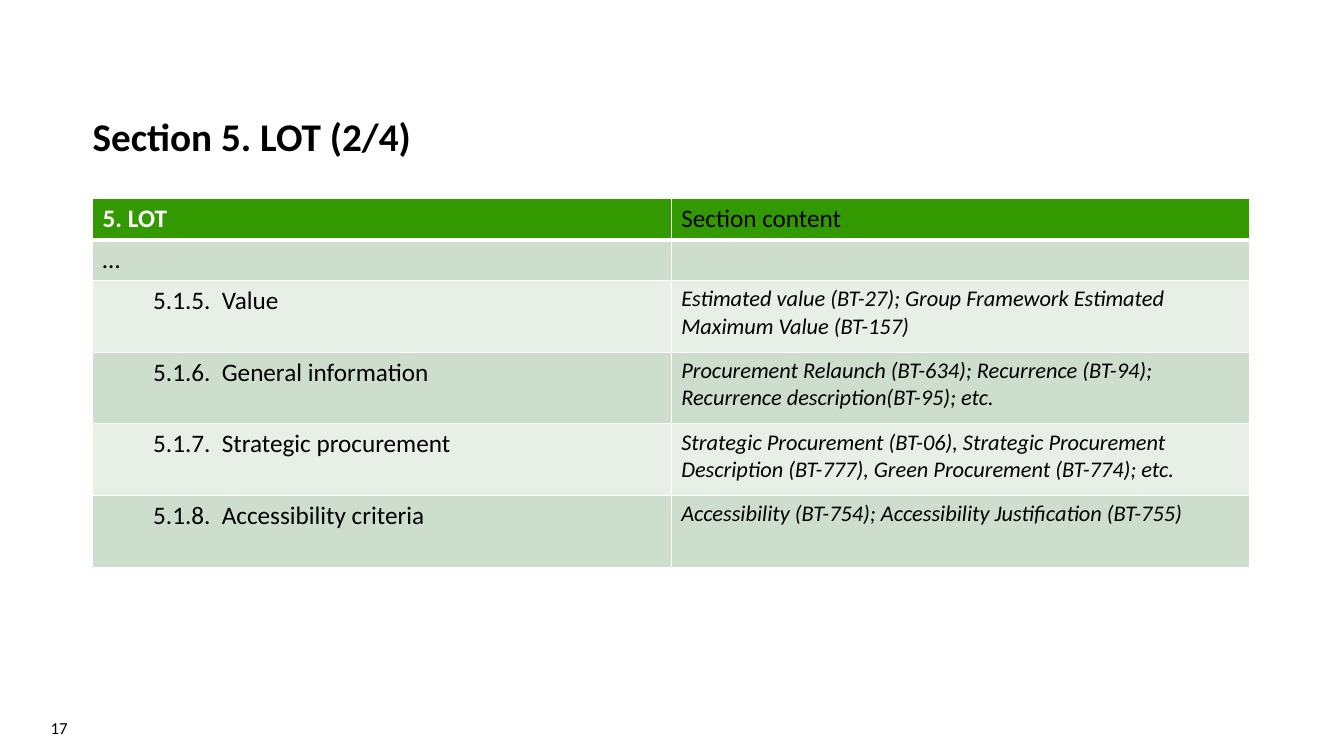
from dataclasses import dataclass

from lxml.etree import SubElement
from pptx import Presentation
from pptx.dml.color import RGBColor
from pptx.enum.text import MSO_ANCHOR, MSO_AUTO_SIZE, PP_ALIGN
from pptx.oxml.ns import qn
from pptx.util import Pt


@dataclass(frozen=True)
class Theme:
    font: str = "Calibri"
    black: str = "000000"
    white: str = "FFFFFF"
    header: str = "339900"
    bands: tuple = ("CEDECC", "E8EFE7")
    title: int = 28
    label: int = 18
    detail: int = 16
    number: int = 12


T = Theme()
HEADER = ("5. LOT", "Section content")
SECTIONS = [
    ("…", ""),
    ("5.1.5.  Value",
     "Estimated value (BT-27); Group Framework Estimated Maximum Value (BT-157)"),
    ("5.1.6.  General information",
     "Procurement Relaunch (BT-634); Recurrence (BT-94); "
     "Recurrence description(BT-95); etc."),
    ("5.1.7.  Strategic procurement",
     "Strategic Procurement (BT-06), Strategic Procurement Description (BT-777), "
     "Green Procurement (BT-774); etc."),
    ("5.1.8.  Accessibility criteria",
     "Accessibility (BT-754); Accessibility Justification (BT-755)"),
]


def add_run(p, text, size, color=T.black, bold=False, italic=False):
    r = p.add_run()
    r.text = text
    f = r.font
    f.name, f.size, f.bold, f.italic = T.font, Pt(size), bold, italic
    f.color.rgb = RGBColor.from_string(color)


def set_borders(cell, bottom):
    tcPr = cell._tc.get_or_add_tcPr()
    for side, width in (("L", 1), ("R", 1), ("T", 1), ("B", bottom)):
        ln = SubElement(tcPr, qn(f"a:ln{side}"), w=str(Pt(width)))
        fill = SubElement(ln, qn("a:solidFill"))
        SubElement(fill, qn("a:srgbClr"), val=T.white)


def fill_cell(cell, text, fill, bottom=1, indent=0, **style):
    set_borders(cell, bottom)
    cell.fill.solid()
    cell.fill.fore_color.rgb = RGBColor.from_string(fill)
    p = cell.text_frame.paragraphs[0]
    if indent:
        p.level = 1
        pPr = p._p.get_or_add_pPr()
        pPr.set("marL", str(Pt(indent)))
        pPr.set("indent", "0")
    if text:
        add_run(p, text, **style)
    else:
        p.font.size = Pt(T.label)


def add_title(s, text, x, y, w, h):
    sp = s.shapes.title
    sp.left, sp.top, sp.width, sp.height = Pt(x), Pt(y), Pt(w), Pt(h)
    tf = sp.text_frame
    tf.auto_size = MSO_AUTO_SIZE.NONE
    tf.vertical_anchor = MSO_ANCHOR.BOTTOM
    tf.margin_left = tf.margin_right = tf.margin_bottom = 0
    tf.margin_top = Pt(3.6)
    p = tf.paragraphs[0]
    p.alignment = PP_ALIGN.LEFT
    p.line_spacing = 0.9
    add_run(p, text, T.title, bold=True)


def add_section_table(s, x, y, w, short_row, tall_row):
    heights = [short_row] * 2 + [tall_row] * (len(SECTIONS) - 1)
    tbl = s.shapes.add_table(len(heights), 2, Pt(x), Pt(y), Pt(w),
                             Pt(sum(heights))).table
    for col in tbl.columns:
        col.width = Pt(w / 2)
    for row, height in zip(tbl.rows, heights):
        row.height = Pt(height)

    # Header row
    fill_cell(tbl.cell(0, 0), HEADER[0], T.header, bottom=3,
              size=T.label, color=T.white, bold=True)
    fill_cell(tbl.cell(0, 1), HEADER[1], T.header, bottom=3, size=T.label)

    # Banded section rows, subsections indented
    for i, (label, detail) in enumerate(SECTIONS):
        band = T.bands[i % 2]
        fill_cell(tbl.cell(i + 1, 0), label, band, indent=36 if i else 0,
                  size=T.label)
        fill_cell(tbl.cell(i + 1, 1), detail, band, size=T.detail, italic=True)


def add_page_number(s, number, x, y, w, h):
    tf = s.shapes.add_textbox(Pt(x), Pt(y), Pt(w), Pt(h)).text_frame
    tf.word_wrap = True
    tf.vertical_anchor = MSO_ANCHOR.MIDDLE
    p = tf.paragraphs[0]
    p.alignment = PP_ALIGN.RIGHT
    add_run(p, number, T.number)


def main():
    prs = Presentation()
    prs.slide_width, prs.slide_height = Pt(960), Pt(540)
    s = prs.slides.add_slide(prs.slide_layouts[5])
    left, width = 66.2, 826.6
    add_title(s, "Section 5. LOT (2/4)", left, 10.1, width, 104.4)
    add_section_table(s, left, 142, width, short_row=29.2, tall_row=51.2)
    add_page_number(s, "17", 0, 505.4, 55.4, 28.8)
    prs.save("out.pptx")


if __name__ == "__main__":
    main()
